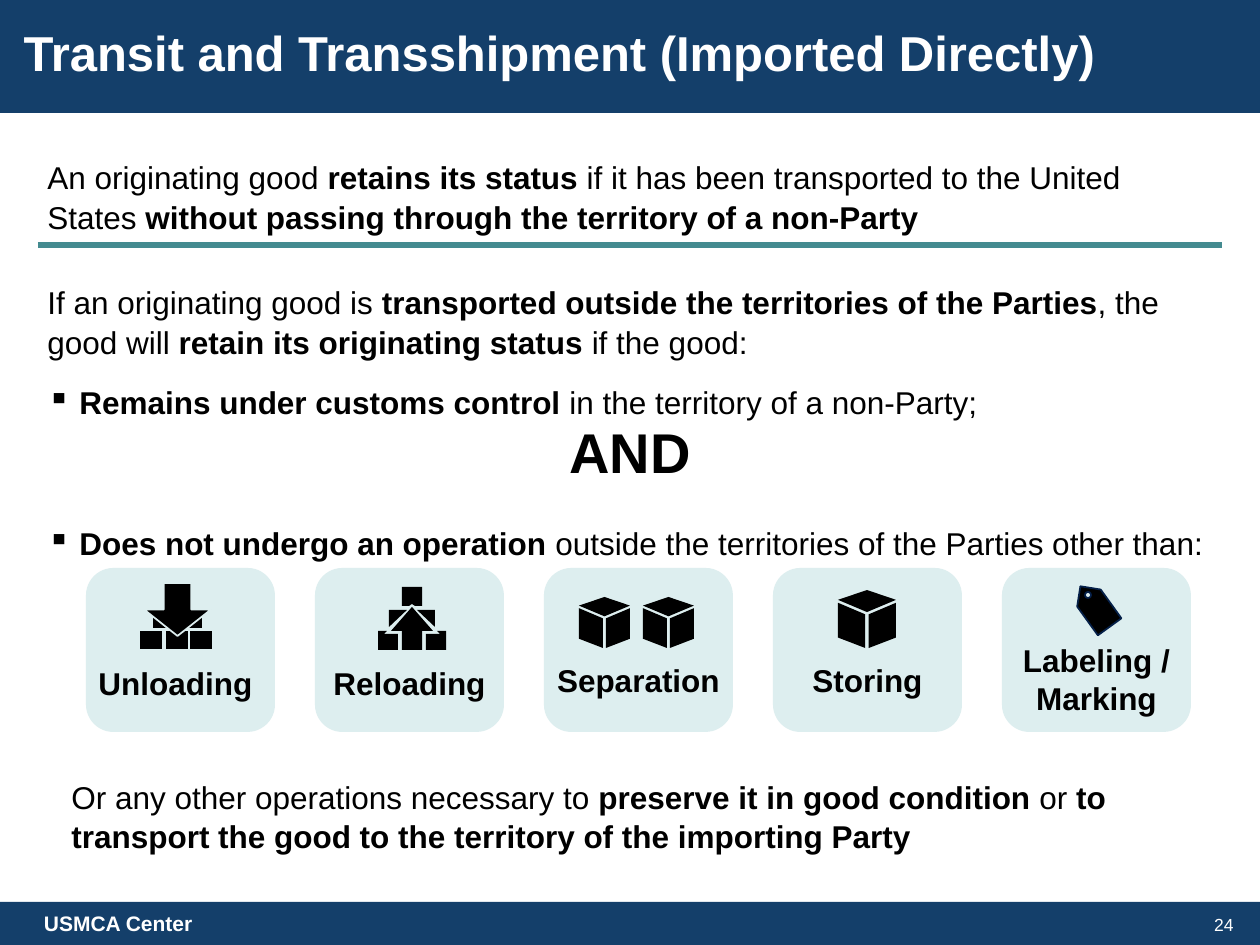
"""Build the slide on transit and transshipment rules."""
import lxml.etree
import pptx
import pptx.dml.color
import pptx.enum.shapes
import pptx.enum.text
import pptx.oxml.ns
import pptx.util

SCALE = 914400 / 126
NAVY = pptx.dml.color.RGBColor(0x14, 0x3F, 0x6A)
INK = pptx.dml.color.RGBColor(0x05, 0x20, 0x49)
TEAL = pptx.dml.color.RGBColor(0x44, 0x8B, 0x90)
MINT = pptx.dml.color.RGBColor(0xDD, 0xEE, 0xEF)
BLACK = pptx.dml.color.RGBColor(0, 0, 0)
WHITE = pptx.dml.color.RGBColor(255, 255, 255)
SHAPE = pptx.enum.shapes.MSO_SHAPE
ALIGN = pptx.enum.text.PP_ALIGN
ANCHOR = pptx.enum.text.MSO_ANCHOR

BODY = [
    ("An originating good *retains its status* if it has been transported to the United "
     "States *without passing through the territory of a non-Party*", 0, 0, False),
    ("If an originating good is *transported outside the territories of the Parties*, the "
     "good will *retain its originating status *if the good:", 14, 0, False),
    ("*Remains under customs control* in the territory of a non-Party;", 0, 32, True),
    ("*Does not undergo an operation *outside the territories of the Parties other than:",
     46, 32, True),
    ("Or any other operations necessary to *preserve it in good condition* or "
     "*to transport the good to the territory of the importing Party*", 110, 24, False),
]
OPERATIONS = [("Unloading", 658, -5), ("Reloading", 658, 0), ("Separation", 655, 0),
              ("Storing", 655, 0), ("Labeling / Marking", 635, 0)]
CARD_LEFT, CARD_STEP, CARD_WIDTH, LABEL_WIDTH = 86, 229, 189, 203
CUBE_FACES = [
    [(1, .82), (.53, 1), (.53, .42), (1, .22)],
    [(.47, .42), (0, .22), (0, .82), (.47, 1)],
    [(.5, 0), (0, .17), (.5, .38), (1, .17)],
]
RELOAD_AXIS = 412
RELOAD_SIDES = [
    [(398, 634), (398, 650), (378, 650), (378, 631), (387, 631), (384, 634)],
    [(389, 610), (389, 627), (407, 610)],
]
RELOAD_CENTER = [
    [(412, 604), (415, 606), (422, 606), (422, 587), (402, 587), (402, 606), (409, 606)],
    [(412, 607), (391, 631), (402, 631), (402, 650), (422, 650), (422, 631), (433, 631)],
]
UNLOAD_BOXES = [(165, 587), (152, 609), (179, 609), (139, 630), (165, 630), (189, 630)]


def px(value):
    return pptx.util.Emu(round(value * SCALE))


def paint(shape, fill, line=None):
    shape.shadow.inherit = False
    shape.fill.solid()
    shape.fill.fore_color.rgb = fill
    if line is None:
        shape.line.fill.background()
    else:
        shape.line.color.rgb = line
        shape.line.width = pptx.util.Pt(1)


def add_shape(slide, kind, box, fill, line=None):
    shape = slide.shapes.add_shape(kind, *map(px, box))
    paint(shape, fill, line)
    return shape


def add_outline(slide, contours):
    contours = [[(px(x), px(y)) for x, y in contour] for contour in contours]
    builder = slide.shapes.build_freeform(*contours[0][0])
    for index, contour in enumerate(contours):
        if index:
            builder.move_to(*contour[0])
        builder.add_line_segments(contour[1:], close=True)
    paint(builder.convert_to_shape(), BLACK)


def style(paragraph, size, color, bold=None, align=ALIGN.LEFT, spacing=1.0):
    paragraph.alignment = align
    paragraph.line_spacing = spacing
    paragraph.font.name = "Arial"
    paragraph.font.size = pptx.util.Pt(size)
    paragraph.font.color.rgb = color
    paragraph.font.bold = bold


def add_text(slide, box, text, size, color, bold=True, align=ALIGN.CENTER, anchor=ANCHOR.TOP):
    frame = slide.shapes.add_textbox(*map(px, box)).text_frame
    frame.word_wrap = True
    frame.vertical_anchor = anchor
    frame.text = text
    style(frame.paragraphs[0], size, color, bold, align)
    return frame


def set_indent(paragraph, indent, bullet):
    properties = paragraph._p.get_or_add_pPr()
    properties.set("marL", str(px(indent)))
    properties.set("indent", str(-px(indent) if bullet else 0))
    if bullet:
        mark = lxml.etree.SubElement(properties, pptx.oxml.ns.qn("a:buChar"))
        mark.set("char", "▪")


def add_body(slide):
    frame = slide.shapes.add_textbox(*map(px, (35, 150, 1183, 702))).text_frame
    frame.word_wrap = True
    for index, (text, before, indent, bullet) in enumerate(BODY):
        paragraph = frame.add_paragraph() if index else frame.paragraphs[0]
        set_indent(paragraph, indent, bullet)
        style(paragraph, 18, BLACK, spacing=1.05)
        paragraph.space_before = pptx.util.Pt(before)
        paragraph.space_after = pptx.util.Pt(12)
        for part, words in enumerate(text.split("*")):
            if words:
                run = paragraph.add_run()
                run.text = words
                run.font.bold = part % 2 == 1


def add_title(slide, text):
    title = slide.shapes.title
    title.left, title.top, title.width, title.height = map(px, (11, 23, 1119, 64))
    title.text_frame.text = text
    title.text_frame.vertical_anchor = ANCHOR.TOP
    title.text_frame.auto_size = pptx.enum.text.MSO_AUTO_SIZE.NONE
    style(title.text_frame.paragraphs[0], 28, WHITE, True, spacing=0.9)


def add_rule(slide):
    kind = pptx.enum.shapes.MSO_CONNECTOR.STRAIGHT
    rule = slide.shapes.add_connector(kind, *map(px, (38, 245, 1222, 245)))
    rule.line.color.rgb = TEAL
    rule.line.width = pptx.util.Pt(3)
    lxml.etree.SubElement(rule._element.spPr, pptx.oxml.ns.qn("a:effectLst"))


def add_cards(slide):
    for index in range(len(OPERATIONS)):
        box = (CARD_LEFT + index * CARD_STEP, 568, CARD_WIDTH, 164)
        add_shape(slide, SHAPE.ROUNDED_RECTANGLE, box, MINT)
    for index, (label, top, shift) in enumerate(OPERATIONS):
        left = CARD_LEFT + index * CARD_STEP + (CARD_WIDTH - LABEL_WIDTH) // 2 + shift
        height = 89 if " " in label else 48
        add_text(slide, (left, top, LABEL_WIDTH, height), label, 18, BLACK)


def add_cube(slide, left, top, size):
    add_outline(slide, [[(left + x * size, top + y * size) for x, y in face]
                        for face in CUBE_FACES])


def add_unloading_icon(slide):
    for left, top in UNLOAD_BOXES:
        add_shape(slide, SHAPE.RECTANGLE, (left, top, 24, 20), BLACK, MINT)
    arrow = add_shape(slide, SHAPE.DOWN_ARROW, (144, 583, 67, 53), BLACK, MINT)
    arrow.adjustments[0] = 0.41
    arrow.adjustments[1] = 0.5


def add_reloading_icon(slide):
    mirrored = [[(2 * RELOAD_AXIS - x, y) for x, y in side] for side in RELOAD_SIDES]
    add_outline(slide, RELOAD_SIDES + mirrored + RELOAD_CENTER)


def add_tag_icon(slide):
    tag = add_shape(slide, SHAPE.PENTAGON, (1070, 592, 50, 29), BLACK, INK)
    tag.rotation = 234.2
    add_shape(slide, SHAPE.OVAL, (1085, 592, 6, 6), MINT, INK)


def main():
    presentation = pptx.Presentation()
    presentation.slide_width, presentation.slide_height = px(1260), px(945)
    slide = presentation.slides.add_slide(presentation.slide_layouts[5])
    add_shape(slide, SHAPE.RECTANGLE, (0, 902, 1260, 43), NAVY)
    header = add_shape(slide, SHAPE.RECTANGLE, (0, 0, 1260, 113), NAVY)
    slide.shapes.title._element.addprevious(header._element)
    add_text(slide, (993, 902, 253, 45), "24", 10, WHITE, False, ALIGN.RIGHT, ANCHOR.MIDDLE)
    footer = add_text(slide, (0, 902, 504, 43), "USMCA Center", 12, WHITE,
                      align=ALIGN.LEFT, anchor=ANCHOR.MIDDLE)
    footer.margin_left = px(44)
    add_title(slide, "Transit and Transshipment (Imported Directly)")
    add_body(slide)
    add_text(slide, (546, 411, 168, 91), "AND", 32, BLACK)
    add_cards(slide)
    add_rule(slide)
    add_tag_icon(slide)
    add_cube(slide, 838, 590, 58)
    add_reloading_icon(slide)
    add_unloading_icon(slide)
    for left in (579, 643):
        add_cube(slide, left, 597, 51)
    presentation.save("out.pptx")


if __name__ == "__main__":
    main()
